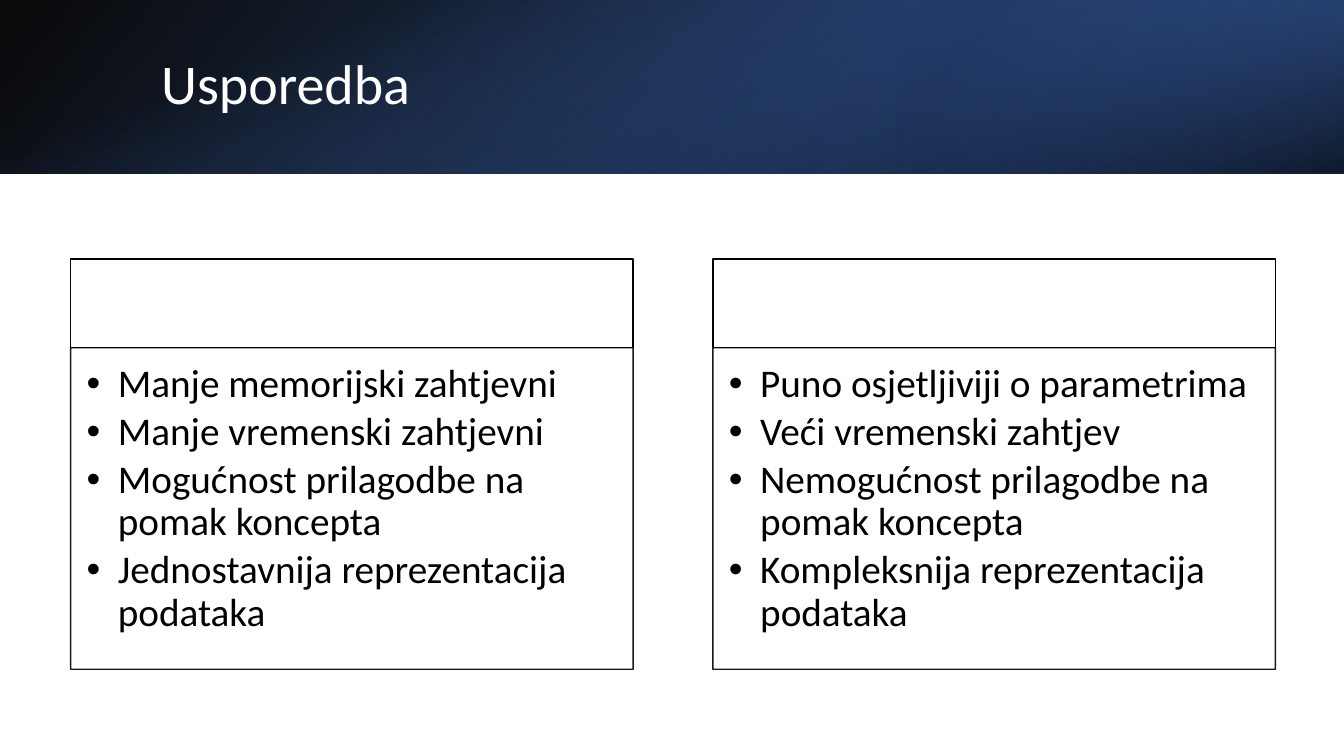
from dataclasses import dataclass

from lxml import etree
from pptx import Presentation
from pptx import util as u
from pptx.dml.color import RGBColor
from pptx.enum import shapes, text
from pptx.oxml.ns import qn


@dataclass(frozen=True)
class Theme:
    font: str = "Calibri"
    title_size: int = 40
    body_size: int = 28
    white: str = "FFFFFF"
    black: str = "000000"
    navy: str = "203864"
    blue: str = "2F5597"
    bright: str = "4472C4"


T = Theme()
TITLE = "Usporedba"
COLUMNS = [
    ["Manje memorijski zahtjevni", "Manje vremenski zahtjevni",
     "Mogućnost prilagodbe na pomak koncepta",
     "Jednostavnija reprezentacija podataka"],
    ["Puno osjetljiviji o parametrima", "Veći vremenski zahtjev",
     "Nemogućnost prilagodbe na pomak koncepta",
     "Kompleksnija reprezentacija podataka"],
]


def set_all(obj, values):
    for name, value in values.items():
        setattr(obj, name, value)


def set_alpha(color_el, percent):
    etree.SubElement(color_el, qn("a:alpha")).set("val", str(percent * 1000))


def add_rect(slide, box):
    sp = slide.shapes.add_shape(shapes.MSO_SHAPE.RECTANGLE, *map(u.Inches, box))
    sp.shadow.inherit = False
    return sp


def add_gradient(slide, box, stops, angle, rotation=0, flip=False):
    """Add a borderless gradient; stops are (position %, colour, opacity %)."""
    sp = add_rect(slide, box)
    sp.rotation = rotation
    if flip:
        sp._element.spPr.find(qn("a:xfrm")).set("flipH", "1")
    sp.line.fill.background()
    sp.fill.gradient()
    sp.fill.gradient_angle = 360 - angle
    for stop, (position, color, opacity) in zip(sp.fill.gradient_stops, stops):
        stop.position = position / 100
        stop.color.rgb = RGBColor.from_string(color)
    for el, (_, _, opacity) in zip(sp._element.spPr.iter(qn("a:srgbClr")), stops):
        set_alpha(el, opacity)


def write(p, words, size, color):
    p.line_spacing = 0.9
    r = p.add_run()
    r.text = words
    set_all(r.font, {"name": T.font, "size": u.Pt(size)})
    r.font.color.rgb = RGBColor.from_string(color)


def add_bullet(p):
    pPr = p._p.get_or_add_pPr()
    indent = u.Inches(0.31)
    pPr.set("marL", str(indent))
    pPr.set("indent", str(-indent))
    etree.SubElement(pPr, qn("a:buFont")).set("typeface", "Arial")
    etree.SubElement(pPr, qn("a:buChar")).set("char", "•")


def add_header(slide, x, y, w, h):
    add_gradient(slide, (x, y, w, h),
                 [(0, T.black, 96), (100, T.blue, 100)], 140, flip=True)
    add_gradient(slide, (x + w * 2 / 3, y, w / 3, h),
                 [(19, T.navy, 68), (100, T.bright, 79)], 320, 180, flip=True)
    # A quarter turn about its centre makes this upright strip fill the header.
    add_gradient(slide, (x + (w - h) / 2, y + (h - w) / 2, h, w),
                 [(23, T.bright, 0), (99, T.black, 74)], 340, 90)
    box = (x + 1.5, y + 0.38, 10.98, 0.96)
    tf = slide.shapes.add_textbox(*map(u.Inches, box)).text_frame
    set_all(tf, {"word_wrap": True, "vertical_anchor": text.MSO_ANCHOR.MIDDLE})
    write(tf.paragraphs[0], TITLE, T.title_size, T.white)


def add_panel(slide, box):
    sp = add_rect(slide, box)
    sp.fill.solid()
    sp.fill.fore_color.rgb = RGBColor.from_string(T.white)
    sp.line.color.rgb = RGBColor.from_string(T.black)
    sp.line.width = u.Pt(1)
    return sp


def add_column(slide, x, y, w, h, items):
    """Place an empty heading panel over a panel of bullets."""
    head_h = 0.88
    add_panel(slide, (x, y, w, head_h))
    body = add_panel(slide, (x, y + head_h, w, h - head_h))
    for el in list(body._element.spPr.iter(qn("a:srgbClr"))):
        set_alpha(el, 90)
    tf = body.text_frame
    set_all(tf, {"word_wrap": True, "vertical_anchor": text.MSO_ANCHOR.TOP,
                 "margin_left": u.Inches(0.16), "margin_top": u.Inches(0.16),
                 "margin_right": u.Inches(0.22), "margin_bottom": u.Inches(0.24)})
    for i, item in enumerate(items):
        p = tf.add_paragraph() if i else tf.paragraphs[0]
        set_all(p, {"alignment": text.PP_ALIGN.LEFT, "space_after": u.Pt(4)})
        write(p, item, T.body_size, T.black)
        add_bullet(p)


def main():
    prs = Presentation()
    set_all(prs, {"slide_width": u.Inches(13.33), "slide_height": u.Inches(7.5)})
    slide = prs.slides.add_slide(prs.slide_layouts[6])
    add_header(slide, 0, 0, 13.33, 1.72)
    for i, items in enumerate(COLUMNS):
        add_column(slide, 0.7 + i * 6.37, 2.57, 5.58, 4.07, items)
    prs.save("out.pptx")


if __name__ == "__main__":
    main()
